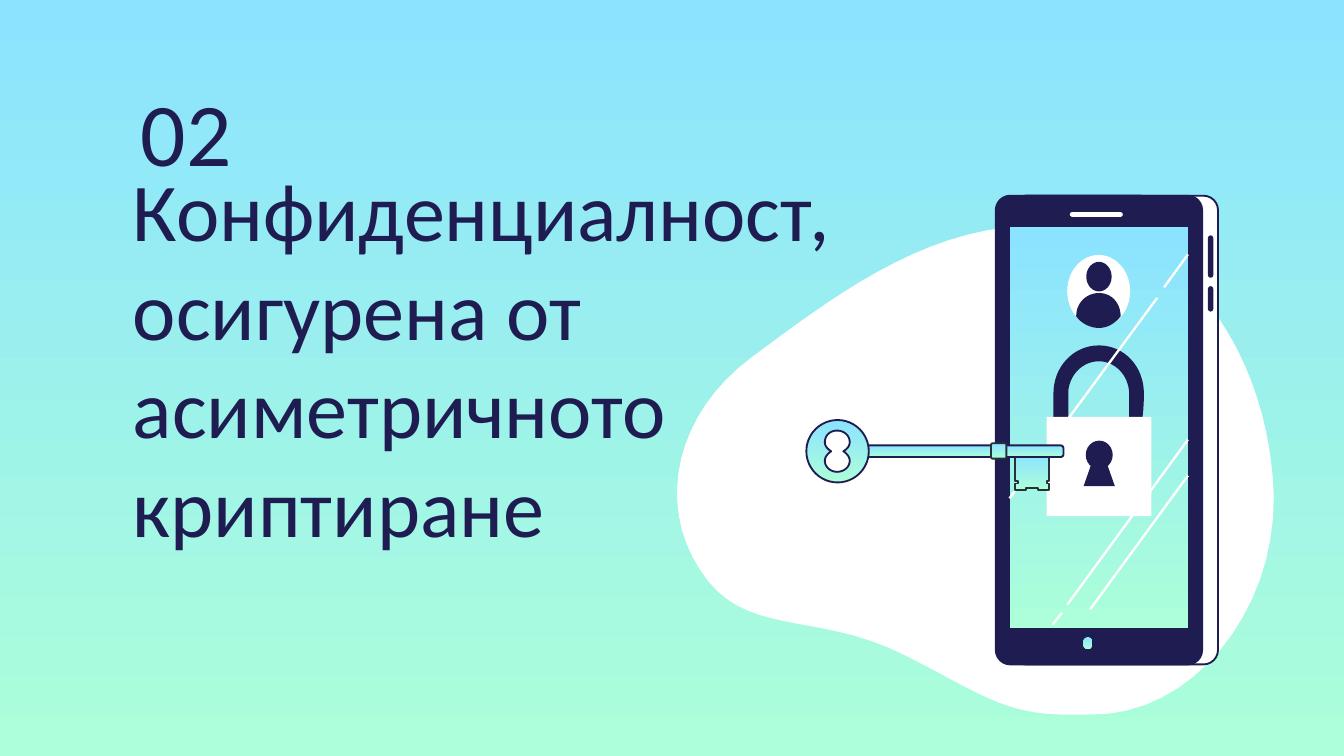
from dataclasses import dataclass
from typing import Optional, Union

from pptx import Presentation
from pptx.dml.color import RGBColor
from pptx.enum.shapes import MSO_CONNECTOR, MSO_SHAPE
from pptx.enum.text import MSO_ANCHOR, MSO_AUTO_SIZE, PP_ALIGN
from pptx.oxml.ns import qn
from pptx.util import Cm, Pt

NAVY = RGBColor(0x1F, 0x1C, 0x51)
SLATE = RGBColor(0x26, 0x32, 0x38)
WHITE = RGBColor(0xFF, 0xFF, 0xFF)
SKY = RGBColor(0x8B, 0xE3, 0xFF)
MINT = RGBColor(0xAC, 0xFF, 0xD9)
SKY_TO_MINT = (SKY, MINT)

RECTANGLE = MSO_SHAPE.RECTANGLE
ROUNDED = MSO_SHAPE.ROUNDED_RECTANGLE
OVAL = MSO_SHAPE.OVAL
TRAPEZOID = MSO_SHAPE.TRAPEZOID
STRAIGHT = MSO_CONNECTOR.STRAIGHT
FONT = "Calibri"
CURVE_STEPS = 16

Fill = Union[RGBColor, tuple]
Point = tuple[float, float]


@dataclass
class Part:
    """A preset shape; lengths in centimetres."""
    kind: MSO_SHAPE
    left: float
    top: float
    width: float
    height: float
    fill: Fill
    line: Optional[RGBColor] = None
    adjustment: Optional[float] = None


@dataclass
class Outline:
    """A free outline: a step of one point is a line, of three a curve."""
    start: Point
    steps: list[tuple[Point, ...]]
    fill: Fill
    line: Optional[RGBColor] = None


def apply_fill(fill, colour: Fill) -> None:
    if isinstance(colour, RGBColor):
        fill.solid()
        fill.fore_color.rgb = colour
        return
    fill.gradient()
    fill.gradient_angle = 270
    for stop, stop_colour, position in zip(fill.gradient_stops, colour, (0, 1)):
        stop.color.rgb = stop_colour
        stop.position = position


def style(shape, fill: Fill, line: Optional[RGBColor]) -> None:
    shape.shadow.inherit = False
    apply_fill(shape.fill, fill)
    if line is None:
        shape.line.fill.background()
    else:
        shape.line.color.rgb = line
        shape.line.width = Pt(1)


def draw_part(page, part: Part) -> None:
    shape = page.shapes.add_shape(part.kind, Cm(part.left), Cm(part.top),
                                  Cm(part.width), Cm(part.height))
    if part.adjustment is not None:
        shape.adjustments[0] = part.adjustment
    style(shape, part.fill, part.line)


def curve_points(start: Point, step: tuple[Point, ...]) -> list[Point]:
    points = []
    for index in range(1, CURVE_STEPS + 1):
        t = index / CURVE_STEPS
        weights = ((1 - t) ** 3, 3 * t * (1 - t) ** 2, 3 * t * t * (1 - t), t ** 3)
        corners = (start, *step)
        points.append(tuple(sum(w * corner[axis] for w, corner in zip(weights, corners))
                            for axis in (0, 1)))
    return points


def draw_outline(page, outline: Outline) -> None:
    points = [outline.start]
    for step in outline.steps:
        points += curve_points(points[-1], step) if len(step) == 3 else step
    corners = [(Cm(x), Cm(y)) for x, y in points]
    builder = page.shapes.build_freeform(*corners[0], scale=1.0)
    builder.add_line_segments(corners[1:], close=True)
    style(builder.convert_to_shape(), outline.fill, outline.line)


def draw_glint(page, start: Point, end: Point) -> None:
    glint = page.shapes.add_connector(STRAIGHT, Cm(start[0]), Cm(start[1]),
                                      Cm(end[0]), Cm(end[1]))
    glint.line.color.rgb = WHITE
    glint.line.width = Pt(1.25)
    properties = glint._element.spPr
    properties.append(properties.makeelement(qn("a:effectLst"), {}))


def fill_placeholder(box, text: str, size: float, anchor: MSO_ANCHOR,
                     left: float, top: float, width: float, height: float) -> None:
    box.left, box.top, box.width, box.height = Cm(left), Cm(top), Cm(width), Cm(height)
    frame = box.text_frame
    frame.text = text
    frame.word_wrap = True
    frame.auto_size = MSO_AUTO_SIZE.NONE
    frame.vertical_anchor = anchor
    frame.margin_left = frame.margin_right = Cm(0.25)
    frame.margin_top = frame.margin_bottom = Cm(0.25)
    para = frame.paragraphs[0]
    para.alignment = PP_ALIGN.LEFT
    para.space_before = Pt(0)
    font = para.runs[0].font
    font.name, font.size, font.color.rgb = FONT, Pt(size), NAVY


BLOB = Outline((19.53, 4.27), [
    ((19.49, 4.27), (19.45, 4.27), (19.41, 4.27)),
    ((17.37, 4.34), (15.65, 5.69), (14.2, 6.76)),
    ((12.78, 7.82), (12.4, 9.5), (13.23, 10.77)),
    ((14.05, 12.07), (15.39, 11.53), (17.07, 12.37)),
    ((18.49, 13.08), (18.95, 13.51), (20.19, 13.51)),
    ((20.42, 13.51), (20.68, 13.51), (20.96, 13.49)),
    ((22.83, 13.28), (24.28, 11.18), (24.05, 8.97)),
    ((23.85, 6.76), (22.71, 5.61), (22.71, 5.61)),
    ((22.71, 5.61), (21.49, 4.27), (19.53, 4.27)),
], WHITE)

PHONE = [
    Part(ROUNDED, 19.11, 3.7, 3.91, 8.86, WHITE, NAVY, 0.07),      # side
    Part(ROUNDED, 22.83, 4.45, 0.1, 0.8, NAVY, None, 0.5),         # volume key
    Part(ROUNDED, 22.83, 5.41, 0.1, 0.48, NAVY, None, 0.5),        # power key
    Part(ROUNDED, 18.82, 3.7, 3.9, 8.86, NAVY, NAVY, 0.07),        # front
    Part(RECTANGLE, 19.08, 4.29, 3.38, 7.59, SKY_TO_MINT),         # screen
    Part(ROUNDED, 20.22, 4.01, 1, 0.09, WHITE, None, 0.5),         # speaker
    Part(OVAL, 20.47, 12.04, 0.18, 0.23, SKY_TO_MINT),             # home button
]

SHOULDERS = Outline((20.77, 5.54), [
    ((21, 5.54), (21.18, 5.72), (21.18, 5.98)),
    ((21.06, 6.13), (20.92, 6.2), (20.77, 6.2)),
    ((20.62, 6.2), (20.45, 6.13), (20.34, 5.98)),
    ((20.34, 5.72), (20.54, 5.54), (20.77, 5.54)),
], NAVY)

AVATAR = [
    Part(OVAL, 20.17, 4.82, 1.19, 1.37, WHITE),
    Part(OVAL, 20.53, 4.95, 0.48, 0.56, NAVY),
    SHOULDERS,
]

SHACKLE = Outline((19.91, 8.4), [
    ((19.91, 7.44),),
    ((19.91, 6.93), (20.29, 6.53), (20.77, 6.53)),
    ((21.25, 6.53), (21.62, 6.93), (21.62, 7.44)),
    ((21.62, 8.4), (21.34, 8.4), (21.34, 8.4)),
    ((21.34, 7.44),),
    ((21.34, 7.11), (21.08, 6.83), (20.77, 6.83)),
    ((20.45, 6.83), (20.19, 7.11), (20.19, 7.44)),
    ((20.19, 8.4),),
], NAVY)

PADLOCK = [
    SHACKLE,
    Part(RECTANGLE, 19.78, 7.88, 1.98, 1.88, WHITE),
    Part(OVAL, 20.52, 8.33, 0.51, 0.54, NAVY),
    Part(TRAPEZOID, 20.48, 8.7, 0.59, 0.49, NAVY, None, 0.35),
]

GLINTS = [
    ((22.45, 8.31), (20.17, 11.43)),
    ((22.45, 4.81), (22, 5.43)),
    ((21.87, 5.63), (19.08, 9.42)),
    ((20.07, 11.58), (19.89, 11.81)),
    ((22.45, 8.99), (20.6, 11.52)),
]

KEY_BIT = Outline((19.18, 8.57), [(
    (19.18, 9.09), (19.24, 9.09), (19.24, 9.14), (19.18, 9.14),
    (19.18, 9.27), (19.39, 9.27), (19.39, 9.22), (19.62, 9.22),
    (19.62, 9.27), (19.83, 9.27), (19.83, 9.14), (19.78, 9.14),
    (19.78, 9.09), (19.83, 9.09), (19.83, 8.57),
)], SKY_TO_MINT, SLATE)

KEY_HOLE = Outline((15.82, 8.14), [
    ((15.69, 8.14), (15.59, 8.23), (15.59, 8.36)),
    ((15.59, 8.43), (15.64, 8.49), (15.71, 8.53)),
    ((15.64, 8.58), (15.59, 8.64), (15.59, 8.71)),
    ((15.59, 8.83), (15.7, 8.92), (15.82, 8.92)),
    ((15.95, 8.92), (16.06, 8.83), (16.06, 8.71)),
    ((16.06, 8.64), (16.01, 8.58), (15.94, 8.53)),
    ((16.01, 8.49), (16.06, 8.43), (16.06, 8.36)),
    ((16.06, 8.23), (15.95, 8.14), (15.82, 8.14)),
], WHITE, NAVY)

KEY = [
    KEY_BIT,
    Part(ROUNDED, 16.3, 8.42, 3.8, 0.22, SKY_TO_MINT, NAVY, 0.25),  # shaft
    Part(ROUNDED, 18.73, 8.38, 0.29, 0.29, SKY_TO_MINT, SLATE, 0.1),  # collar
    Part(OVAL, 15.24, 7.94, 1.18, 1.18, SKY_TO_MINT, NAVY),         # bow
    KEY_HOLE,
]


def draw_all(page, pieces: list[Union[Part, Outline]]) -> None:
    for piece in pieces:
        if isinstance(piece, Part):
            draw_part(page, piece)
        else:
            draw_outline(page, piece)


def main() -> None:
    deck = Presentation()
    deck.slide_width, deck.slide_height = Cm(25.4), Cm(14.29)
    page = deck.slides.add_slide(deck.slide_layouts[0])
    apply_fill(page.background.fill, SKY_TO_MINT)

    # Section title and number
    fill_placeholder(page.shapes.title,
                     "Конфиденциалност, осигурена от асиметричното криптиране",
                     44, MSO_ANCHOR.MIDDLE, 2.26, 4.42, 14.02, 4.65)
    fill_placeholder(page.placeholders[1], "02", 48, MSO_ANCHOR.BOTTOM,
                     2.41, 1.52, 7.39, 2.21)

    # Illustration, from back to front
    draw_all(page, [BLOB, *PHONE, *AVATAR, *PADLOCK])
    for start, end in GLINTS:
        draw_glint(page, start, end)
    draw_all(page, KEY)

    deck.save("out.pptx")


if __name__ == "__main__":
    main()
